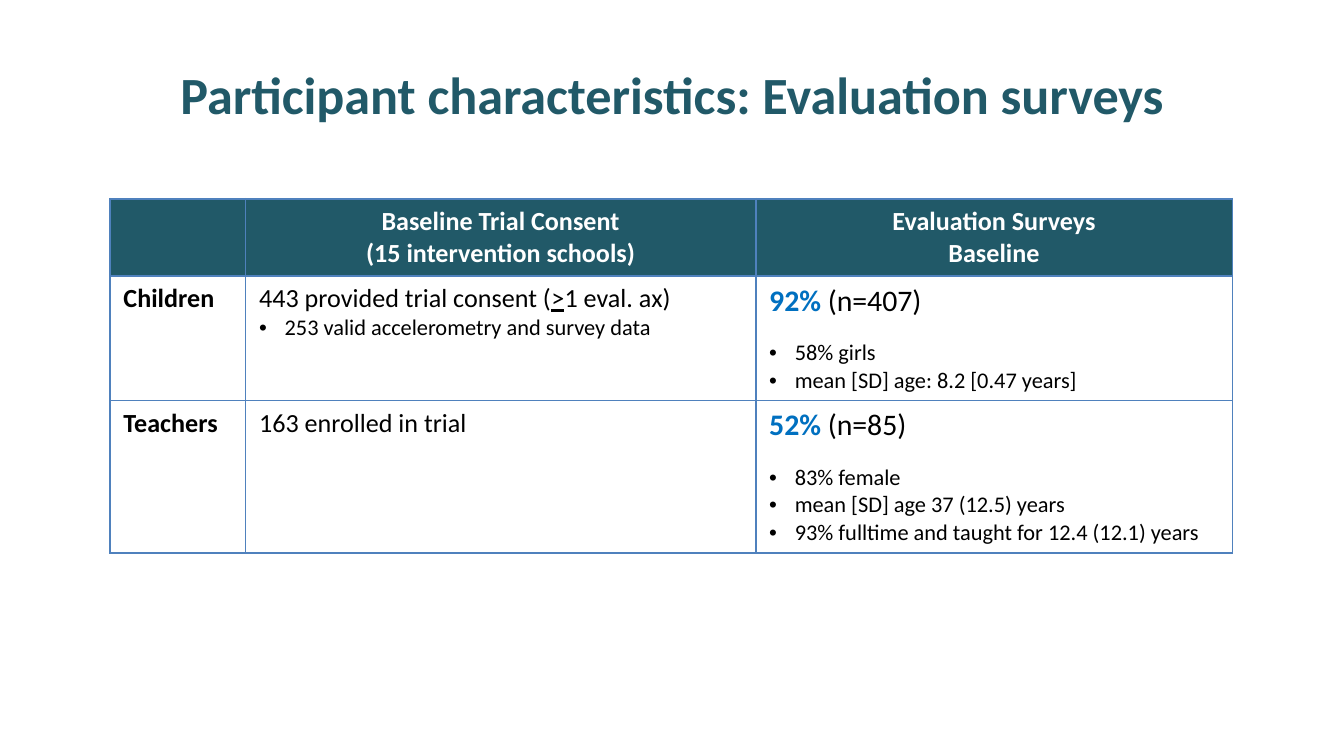
"""Build the participant characteristics slide with its survey table."""
from dataclasses import dataclass

from lxml import etree
from pptx import Presentation, util as u
from pptx.dml.color import RGBColor
from pptx.enum import text
from pptx.oxml import ns


@dataclass(frozen=True)
class Theme:
    font: str = "Calibri"
    teal: str = "215968"
    white: str = "FFFFFF"
    black: str = "000000"
    blue: str = "0070C0"
    border: str = "4F81BD"
    title: int = 28
    figure: int = 16
    body: int = 14
    detail: int = 12
    gap: int = 11
    border_width: int = 1


THEME = Theme()
SLIDE_WIDTH, SLIDE_HEIGHT = u.Inches(10.01), u.Inches(5.63)
BULLET_INDENT = u.Inches(0.19)
COLUMN_SHARES = (10.09, 37.96, 35.46)
ROW_SHARES = (10.2, 16.5, 20.2)


@dataclass(frozen=True)
class Span:
    words: str
    size: int = THEME.body
    color: str = THEME.black
    bold: bool = False
    underline: bool = False


@dataclass(frozen=True)
class Para:
    spans: tuple[Span, ...]
    centered: bool = False
    bullet: bool = False
    gap: int = 0


def across(percent: float) -> int:
    """Turn a percentage of the slide width into a length."""
    return round(SLIDE_WIDTH * percent / 100)


def down(percent: float) -> int:
    """Turn a percentage of the slide height into a length."""
    return round(SLIDE_HEIGHT * percent / 100)


def heading(*lines: str) -> list[Para]:
    """Describe the lines of a column heading."""
    return [Para((Span(line, color=THEME.white, bold=True),), centered=True) for line in lines]


def label(words: str) -> list[Para]:
    """Describe a row label."""
    return [Para((Span(words, bold=True),))]


def details(*lines: str, gap: int = 0) -> list[Para]:
    """Describe bullets, with a gap above the first."""
    return [
        Para((Span(line, THEME.detail),), bullet=True, gap=0 if index else gap)
        for index, line in enumerate(lines)
    ]


def result(share: str, count: str, *lines: str) -> list[Para]:
    """Describe a response rate and the bullets below it."""
    rate = Span(f"{share} ", THEME.figure, THEME.blue, bold=True)
    return [Para((rate, Span(count, THEME.figure))), *details(*lines, gap=THEME.gap)]


TITLE = [Para((Span("Participant characteristics: Evaluation surveys", THEME.title, THEME.teal, True),), centered=True)]
CONSENT = Para((Span("443 provided trial consent ("), Span(">", underline=True), Span("1 eval. ax)")))
ROWS = (
    (
        [],
        heading("Baseline Trial Consent", "(15 intervention schools)"),
        heading("Evaluation Surveys", "Baseline"),
    ),
    (
        label("Children"),
        [CONSENT, *details("253 valid accelerometry and survey data")],
        result("92%", "(n=407)", "58% girls", "mean [SD] age: 8.2 [0.47 years]"),
    ),
    (
        label("Teachers"),
        [Para((Span("163 enrolled in trial"),))],
        result(
            "52%",
            "(n=85)",
            "83% female",
            "mean [SD] age 37 (12.5) years",
            "93% fulltime and taught for 12.4 (12.1) years",
        ),
    ),
)


def add_bullet(paragraph) -> None:
    """Give a paragraph a hanging bullet."""
    properties = paragraph._p.get_or_add_pPr()
    properties.set("marL", str(BULLET_INDENT))
    properties.set("indent", str(-BULLET_INDENT))
    etree.SubElement(properties, ns.qn("a:buFont"), typeface="Arial")
    etree.SubElement(properties, ns.qn("a:buChar"), char="•")


def write(frame, paras: list[Para]) -> None:
    """Fill a text frame with paragraphs."""
    for index, para in enumerate(paras):
        paragraph = frame.add_paragraph() if index else frame.paragraphs[0]
        paragraph.alignment = text.PP_ALIGN.CENTER if para.centered else text.PP_ALIGN.LEFT
        if para.gap:
            paragraph.space_before = u.Pt(para.gap)
        if para.bullet:
            add_bullet(paragraph)
        for span in para.spans:
            run = paragraph.add_run()
            run.text = span.words
            formats = {
                "name": THEME.font,
                "size": u.Pt(span.size),
                "bold": span.bold,
                "underline": span.underline,
            }
            for name, value in formats.items():
                setattr(run.font, name, value)
            run.font.color.rgb = RGBColor.from_string(span.color)


def add_borders(cell) -> None:
    """Draw the four borders of a cell."""
    properties = cell._tc.get_or_add_tcPr()
    for side in ("lnL", "lnR", "lnT", "lnB"):
        line = etree.SubElement(properties, ns.qn(f"a:{side}"), w=str(u.Pt(THEME.border_width)))
        fill = etree.SubElement(line, ns.qn("a:solidFill"))
        etree.SubElement(fill, ns.qn("a:srgbClr"), val=THEME.border)


def add_title(page) -> None:
    """Place the slide title."""
    box = page.shapes.add_textbox(across(5), down(4.09), across(90), down(16.7))
    formats = {"word_wrap": True, "vertical_anchor": text.MSO_ANCHOR.MIDDLE}
    for name, value in formats.items():
        setattr(box.text_frame, name, value)
    write(box.text_frame, TITLE)


def add_survey_table(page) -> None:
    """Place the table of consent and survey results."""
    table = page.shapes.add_table(
        len(ROW_SHARES), len(COLUMN_SHARES), across(8.19), down(26.29),
        across(sum(COLUMN_SHARES)), down(sum(ROW_SHARES)),
    ).table
    for name, value in {"first_row": False, "horz_banding": False}.items():
        setattr(table, name, value)
    for column, share in zip(table.columns, COLUMN_SHARES):
        column.width = across(share)
    for row_index, (row, share, contents) in enumerate(zip(table.rows, ROW_SHARES, ROWS)):
        row.height = down(share)
        for cell, paras in zip(row.cells, contents):
            add_borders(cell)
            if row_index:
                cell.fill.background()
            else:
                cell.fill.solid()
                cell.fill.fore_color.rgb = RGBColor.from_string(THEME.teal)
            write(cell.text_frame, paras)


def main() -> None:
    """Build and save the deck."""
    deck = Presentation()
    for name, value in {"slide_width": SLIDE_WIDTH, "slide_height": SLIDE_HEIGHT}.items():
        setattr(deck, name, value)
    page = deck.slides.add_slide(deck.slide_layouts[6])
    add_title(page)
    add_survey_table(page)
    deck.save("out.pptx")


if __name__ == "__main__":
    main()
